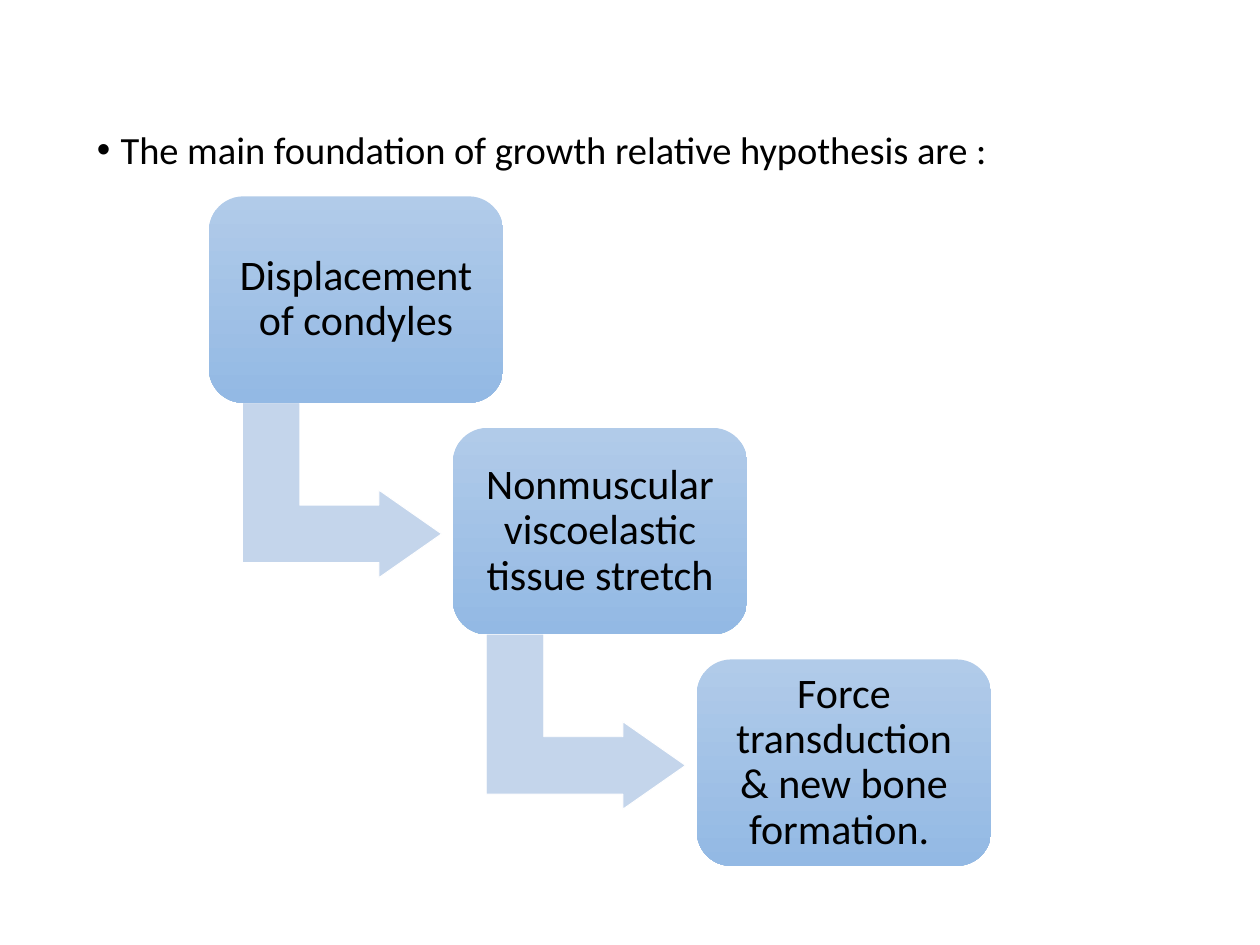
from dataclasses import dataclass

from lxml.etree import SubElement
from pptx import Presentation
from pptx.dml.color import RGBColor
from pptx.enum.shapes import MSO_SHAPE as Shape
from pptx.enum.text import MSO_ANCHOR as Anchor, MSO_AUTO_SIZE as AutoSize, PP_ALIGN as Align
from pptx.oxml.ns import qn
from pptx.util import Pt


@dataclass(frozen=True)
class Theme:
    font: str = "Calibri"
    text: str = "000000"
    box_top: str = "B1CBE9"
    box_bottom: str = "93B9E4"
    arrow: str = "C4D5EB"
    arrow_line: str = "FFFFFF"
    lead_size: int = 22
    step_size: int = 24


class SlideBuilder:
    def __init__(self, slide, theme):
        self.slide = slide
        self.theme = theme

    def add_run(self, paragraph, text, size):
        run = paragraph.add_run()
        run.text = text
        run.font.name = self.theme.font
        run.font.size = Pt(size)
        run.font.color.rgb = RGBColor.from_string(self.theme.text)

    def add_shape(self, kind, left, top, width, height, adjustments):
        shape = self.slide.shapes.add_shape(kind, Pt(left), Pt(top), Pt(width), Pt(height))
        shape.shadow.inherit = False
        for index, value in enumerate(adjustments):
            shape.adjustments[index] = value
        return shape

    def lead(self, text, left, top, width, height):
        body = self.slide.placeholders[1]
        body.left, body.top, body.width, body.height = map(Pt, (left, top, width, height))
        frame = body.text_frame
        frame.auto_size = AutoSize.NONE
        paragraph = frame.paragraphs[0]
        paragraph.line_spacing = 0.9
        paragraph.space_before = Pt(7.5)
        properties = paragraph._p.get_or_add_pPr()
        properties.set("marL", str(Pt(13.5)))
        properties.set("indent", str(-Pt(13.5)))
        SubElement(properties, qn("a:buFont"), typeface="Arial")
        SubElement(properties, qn("a:buChar"), char="•")
        self.add_run(paragraph, text, self.theme.lead_size)

    def step(self, text, left, top, width, height):
        box = self.add_shape(Shape.ROUNDED_RECTANGLE, left, top, width, height, [0.167])
        box.line.fill.background()
        box.fill.gradient()
        box.fill.gradient_angle = 270
        colours = (self.theme.box_top, self.theme.box_bottom)
        for stop, colour in zip(box.fill.gradient_stops, colours):
            stop.color.rgb = RGBColor.from_string(colour)
        frame = box.text_frame
        frame.word_wrap = True
        frame.vertical_anchor = Anchor.MIDDLE
        frame.margin_left = frame.margin_right = Pt(7.2)
        frame.margin_top = frame.margin_bottom = Pt(7.2)
        paragraph = frame.paragraphs[0]
        paragraph.alignment = Align.CENTER
        paragraph.line_spacing = 0.9
        self.add_run(paragraph, text, self.theme.step_size)

    def bent_arrow(self, left, top, width, height):
        arrow = self.add_shape(Shape.BENT_UP_ARROW, left, top, width, height,
                               [0.328, 0.25, 0.358])
        arrow.rotation = 90
        arrow.fill.solid()
        arrow.fill.fore_color.rgb = RGBColor.from_string(self.theme.arrow)
        arrow.line.color.rgb = RGBColor.from_string(self.theme.arrow_line)
        arrow.line.width = Pt(0.5)


def main():
    presentation = Presentation()
    presentation.slide_width, presentation.slide_height = Pt(720), Pt(540)
    slide = presentation.slides.add_slide(presentation.slide_layouts[1])
    # The slide has body text but no title
    title = slide.shapes.title
    title.element.getparent().remove(title.element)
    builder = SlideBuilder(slide, Theme())

    # Introductory bullet
    builder.lead("The main foundation of growth relative hypothesis are :", 48.2, 71.3, 538.6, 404)

    # Descending steps, each joined to the next by a bent arrow
    steps = [
        "Displacement of condyles",
        "Nonmuscular viscoelastic tissue stretch",
        "Force transduction & new bone formation. ",
    ]
    for index, text in enumerate(steps):
        left, top = 119.4 + index * 139.4, 112.2 + index * 132.3
        if index < len(steps) - 1:
            builder.bent_arrow(left + 26, top + 111, 100, 113.8)
        builder.step(text, left, top, 168.2, 118)

    presentation.save("out.pptx")


if __name__ == "__main__":
    main()
